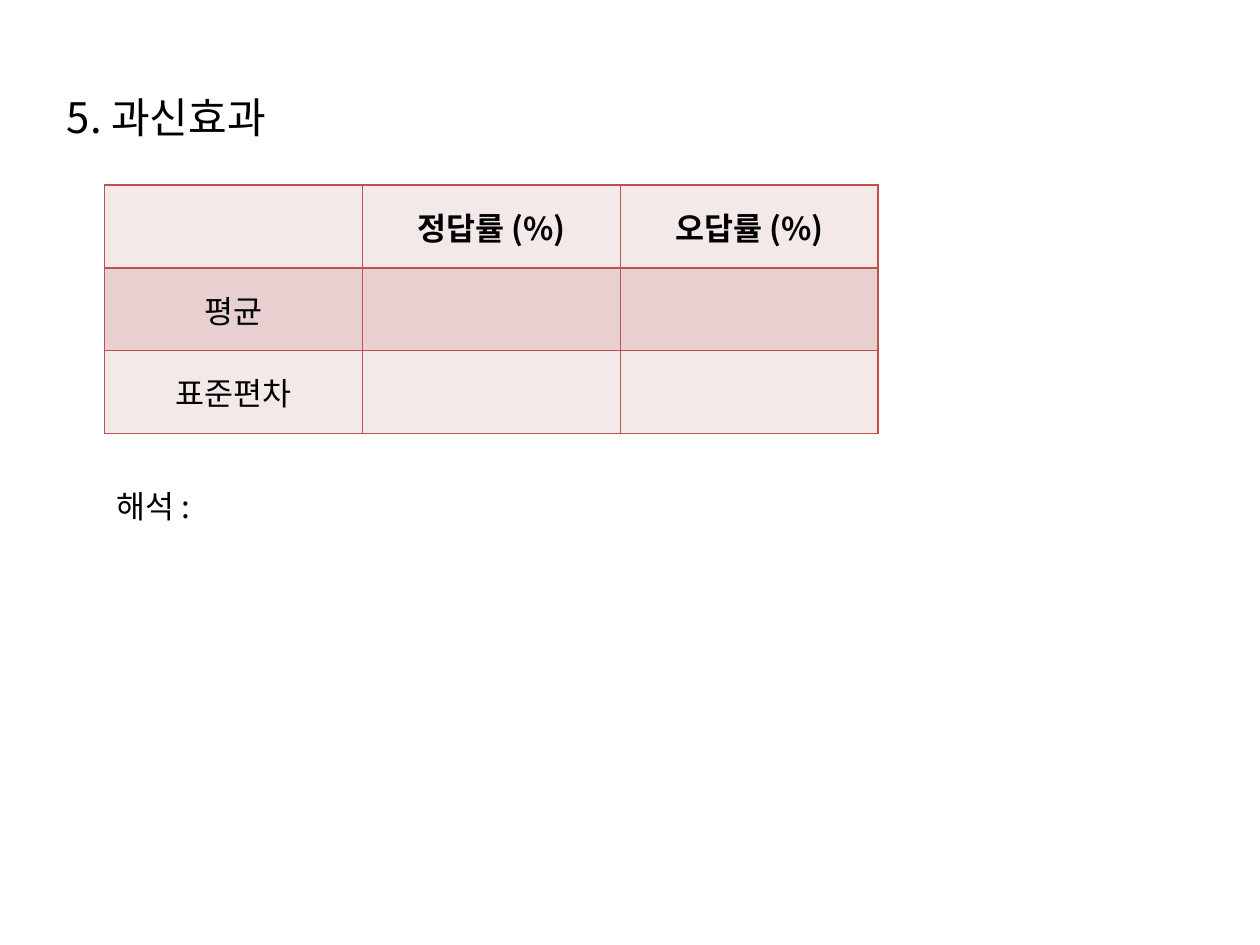
from lxml import etree
from pptx import Presentation
from pptx.dml.color import RGBColor
from pptx.enum import text
from pptx.oxml import ns
from pptx.util import Inches, Pt

# Content
TITLE = "5. 과신효과"
TABLE_ROWS = [
    ["", "정답률 (%)", "오답률 (%)"],
    ["평균", "", ""],
    ["표준편차", "", ""],
]
NOTE = "해석 :"

# Format
FONT = "Noto Sans CJK KR"
BLACK = RGBColor(0x00, 0x00, 0x00)
BORDER = RGBColor(0xC0, 0x50, 0x4D)
BANDS = [RGBColor(0xF4, 0xE9, 0xE9), RGBColor(0xE8, 0xD0, 0xD0)]
TITLE_BOX = (0.43, 0.68, 6.54, 0.5)
TABLE_BOX = (0.83, 1.47, 6.14, 1.97)
NOTE_BOX = (0.83, 3.82, 3.46, 0.4)


def write(frame, words, size, bold=False, align=text.PP_ALIGN.LEFT):
    paragraph = frame.paragraphs[0]
    paragraph.alignment = align
    run = paragraph.add_run()
    run.text = words
    run.font.color.rgb = BLACK
    for name, value in {"name": FONT, "size": Pt(size), "bold": bold}.items():
        setattr(run.font, name, value)
    east_asian = etree.SubElement(run.font._element, ns.qn("a:ea"))
    east_asian.set("typeface", FONT)


def fit_frame(frame):
    settings = {
        "word_wrap": True,
        "auto_size": text.MSO_AUTO_SIZE.SHAPE_TO_FIT_TEXT,
        "vertical_anchor": text.MSO_ANCHOR.TOP,
    }
    for name, value in settings.items():
        setattr(frame, name, value)


def add_borders(cell):
    properties = cell._tc.get_or_add_tcPr()
    for position, side in enumerate(("lnL", "lnR", "lnT", "lnB")):
        line = etree.Element(ns.qn(f"a:{side}"), w=str(Pt(1)))
        fill = etree.SubElement(line, ns.qn("a:solidFill"))
        etree.SubElement(fill, ns.qn("a:srgbClr"), val=str(BORDER))
        properties.insert(position, line)


presentation = Presentation()
presentation.slide_width, presentation.slide_height = Inches(10), Inches(7.5)
slide = presentation.slides.add_slide(presentation.slide_layouts[5])

# Title
title = slide.shapes.title
for name, value in zip(("left", "top", "width", "height"), TITLE_BOX):
    setattr(title, name, Inches(value))
fit_frame(title.text_frame)
write(title.text_frame, TITLE, 24)

# Results table
table = slide.shapes.add_table(
    len(TABLE_ROWS), len(TABLE_ROWS[0]), *map(Inches, TABLE_BOX)
).table
for row_index, row in enumerate(TABLE_ROWS):
    for column_index, words in enumerate(row):
        cell = table.cell(row_index, column_index)
        cell.vertical_anchor = text.MSO_ANCHOR.MIDDLE
        cell.fill.solid()
        cell.fill.fore_color.rgb = BANDS[row_index % 2]
        add_borders(cell)
        if words:
            write(cell.text_frame, words, 18, row_index == 0, text.PP_ALIGN.CENTER)

# Interpretation
note = slide.shapes.add_textbox(*map(Inches, NOTE_BOX))
fit_frame(note.text_frame)
write(note.text_frame, NOTE, 18)

presentation.save("out.pptx")
